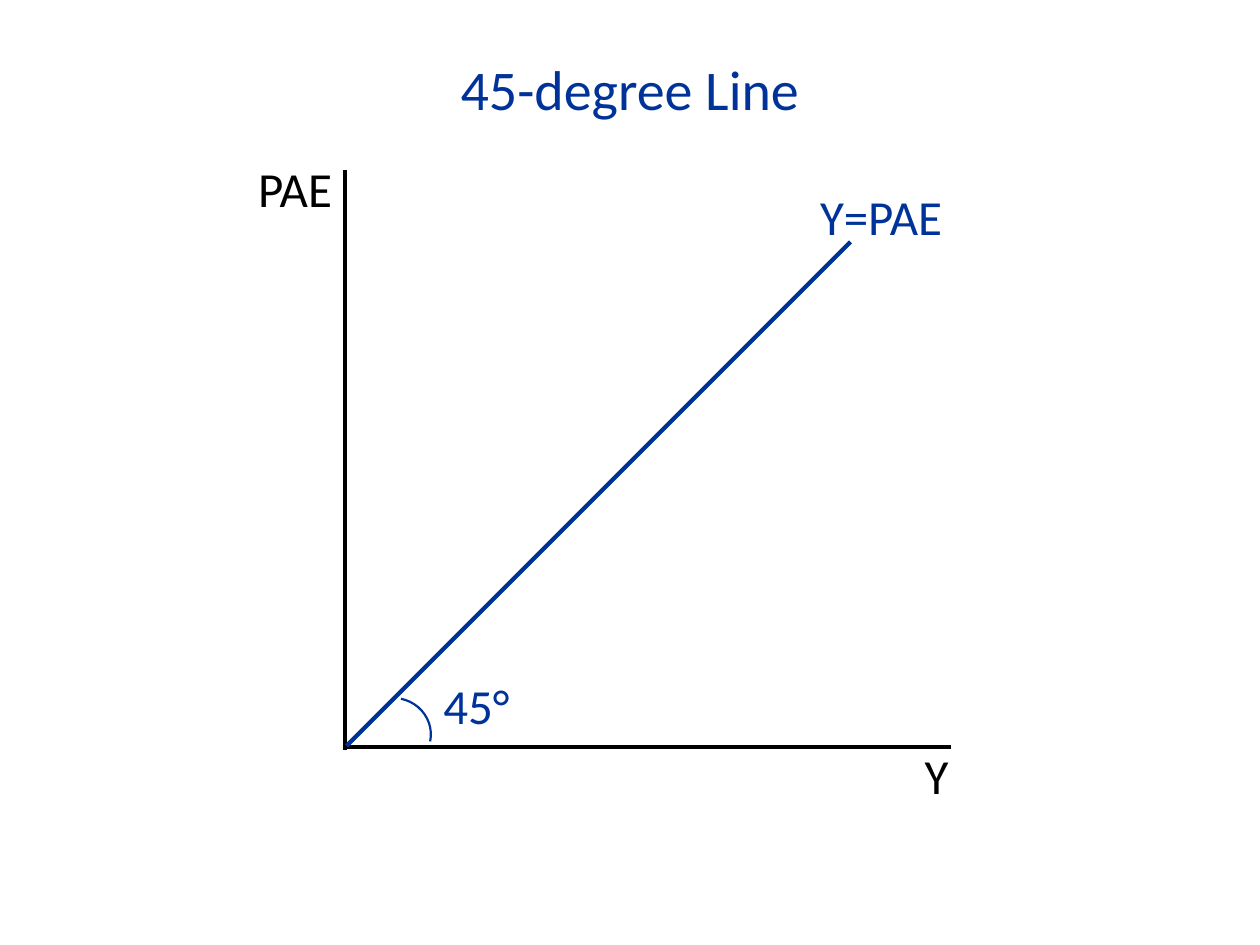
from lxml import etree
from pptx import Presentation
from pptx.dml.color import RGBColor
from pptx.enum.shapes import MSO_CONNECTOR, MSO_SHAPE
from pptx.enum.text import MSO_ANCHOR, PP_ALIGN
from pptx.oxml.ns import qn
from pptx.util import Emu, Pt

LINE = MSO_CONNECTOR.STRAIGHT
ARC = MSO_SHAPE.ARC
LEFT, CENTER = PP_ALIGN.LEFT, PP_ALIGN.CENTER
TOP, MIDDLE = MSO_ANCHOR.TOP, MSO_ANCHOR.MIDDLE
SCALE = 9144  # EMU per px, 100 px to the inch
COLORS = {"ink": "000000", "blue": "003399"}


def px(*sizes):
    return [Emu(size * SCALE) for size in sizes]


def rgb(name):
    return RGBColor.from_string(COLORS[name])


class Graph:
    font = "Calibri"

    def __init__(self, slide):
        self.shapes = slide.shapes

    def text(self, box, words, color, size=28, align=LEFT, anchor=TOP, spacing=None):
        frame = self.shapes.add_textbox(*px(*box)).text_frame
        frame.word_wrap = True
        frame.vertical_anchor = anchor
        para = frame.paragraphs[0]
        para.text = words
        para.alignment = align
        para.line_spacing = spacing
        para.font.name = self.font
        para.font.size = Pt(size)
        para.font.color.rgb = rgb(color)

    def stroke(self, shape, color, width):
        shape.line.color.rgb = rgb(color)
        shape.line.width = Pt(width)

    def line(self, start, end, color, width=2.5):
        line = self.shapes.add_connector(LINE, *px(*start, *end))
        self.stroke(line, color, width)
        etree.SubElement(line._element.spPr, qn("a:effectLst"))

    def arc(self, box, color, turn, width=1.25):
        arc = self.shapes.add_shape(ARC, *px(*box))
        arc.shadow.inherit = False
        arc.fill.background()
        arc.rotation = turn
        self.stroke(arc, color, width)


def main():
    deck = Presentation()
    deck.slide_width, deck.slide_height = px(1000, 750)
    graph = Graph(deck.slides.add_slide(deck.slide_layouts[6]))

    # Title
    graph.text((70, 38, 860, 64), "45-degree Line", "blue", 32, CENTER, MIDDLE)

    # Axes
    graph.text((195, 130, 82, 49), "PAE", "ink", spacing=0.8)
    graph.line((274, 135), (274, 595), "ink")
    graph.line((275, 593), (755, 593), "ink")
    graph.text((724, 587, 49, 57), "Y", "ink")

    # 45-degree line, with equal run and rise
    left, base, run = 275, 592, 400
    graph.line((left, base), (left + run, base - run), "blue")
    graph.text((641, 143, 125, 57), "Y=PAE", "blue")

    # Angle mark
    graph.arc((283, 554, 59, 57), "blue", 11.6)
    graph.text((342, 531, 92, 57), "45°", "blue")

    deck.save("out.pptx")


if __name__ == "__main__":
    main()
